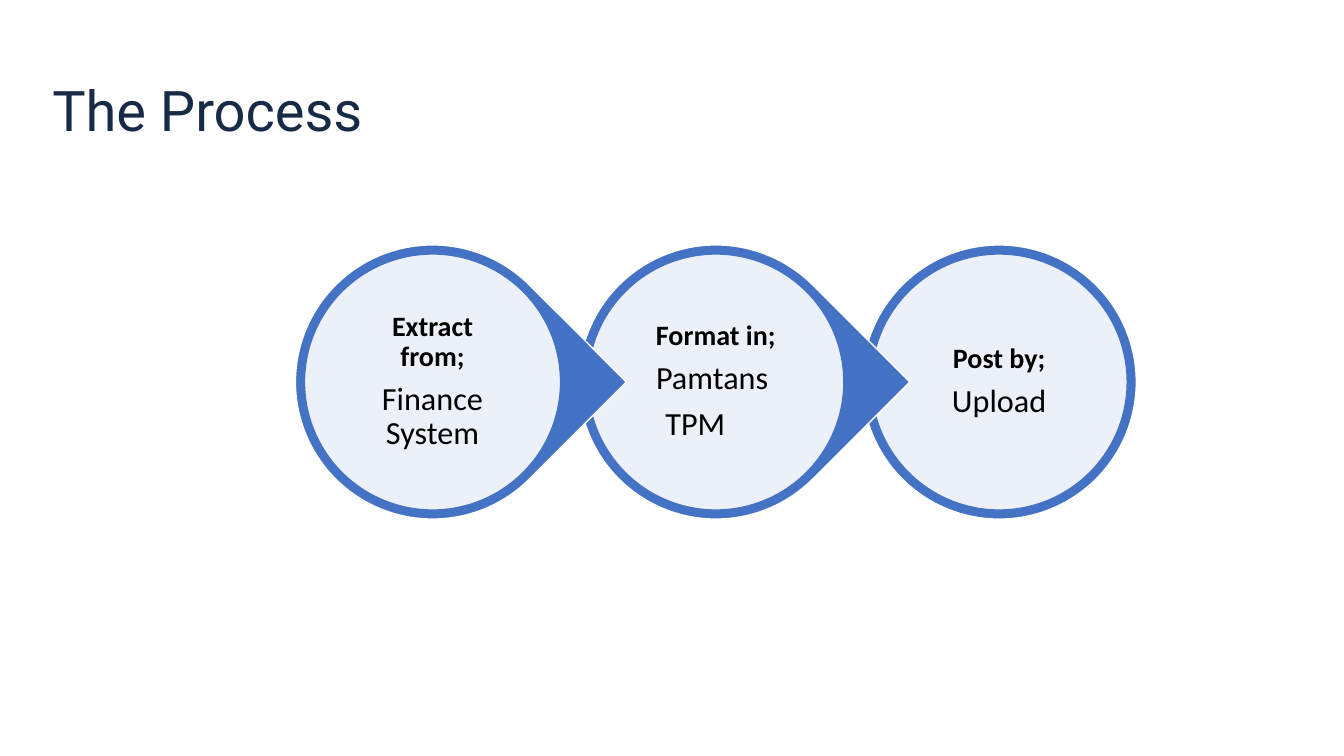
import pptx
import pptx.dml.color
import pptx.enum.shapes
import pptx.enum.text
import pptx.util
from lxml import etree

Inches, Pt = pptx.util.Inches, pptx.util.Pt
SHAPES = pptx.enum.shapes.MSO_SHAPE
ANCHOR = pptx.enum.text.MSO_ANCHOR
ALIGN = pptx.enum.text.PP_ALIGN

COLORS = {"title": "172B46", "ring": "4472C4", "white": "FFFFFF", "text": "000000"}

SLIDE_WIDTH, SLIDE_HEIGHT = 13.33, 7.5
FIRST_CENTER, CENTER_Y = 4.29, 3.79
STEP_PITCH = 2.81
RING_SIZE, DISC_SIZE, LABEL_SIZE = 2.72, 2.54, 1.28

STEPS = [
    ["Extract from;", "Finance System"],
    ["Format in;", "Pamtans ", "TPM\t"],
    ["Post by;", "Upload"],
]


def rgb(name):
    return pptx.dml.color.RGBColor.from_string(COLORS[name])


def centered_square(center_x, size):
    """Return left, top, width and height of a square on the row of steps."""
    return [Inches(v) for v in (center_x - size / 2, CENTER_Y - size / 2, size, size)]


def add_round(slide, preset, center_x, size, fill, line):
    outline = slide.shapes.add_shape(preset, *centered_square(center_x, size))
    outline.shadow.inherit = False
    outline.fill.solid()
    outline.fill.fore_color.rgb = rgb(fill)
    outline.line.color.rgb = rgb(line)
    outline.line.width = Pt(1)
    return outline


def set_opacity(shape, percent):
    color = shape.fill._xPr.find(".//" + pptx.oxml.ns.qn("a:srgbClr"))
    etree.SubElement(color, pptx.oxml.ns.qn("a:alpha"), val=str(percent * 1000))


def style(paragraph, font_name, size, color, bold=False):
    paragraph.line_spacing = 0.9
    font = paragraph.font
    font.name, font.size, font.bold = font_name, Pt(size), bold
    font.color.rgb = rgb(color)


def add_title(slide, wording):
    title = slide.shapes.add_textbox(
        Inches(0.42), Inches(0.78), Inches(12.65), Inches(0.94))
    title.text_frame.word_wrap = True
    title.text_frame.text = wording
    style(title.text_frame.paragraphs[0], "Roboto", 40, "title")


def add_label(slide, center_x, lines):
    """Write a bold heading and the lines below it inside a disc."""
    frame = slide.shapes.add_textbox(*centered_square(center_x, LABEL_SIZE)).text_frame
    frame.word_wrap = True
    frame.vertical_anchor = ANCHOR.MIDDLE
    frame.margin_left = frame.margin_right = Inches(0.03)
    frame.margin_top = frame.margin_bottom = Inches(0.03)
    frame.text = "\n".join(lines)
    for index, paragraph in enumerate(frame.paragraphs):
        heading = index == 0
        size = 20 if heading else 23
        paragraph.alignment = ALIGN.CENTER
        paragraph.space_after = Pt(round(size * 0.35))
        style(paragraph, "Calibri", size, "text", heading)


def add_step(slide, center_x, lines, points_on):
    preset = SHAPES.TEAR if points_on else SHAPES.OVAL
    ring = add_round(slide, preset, center_x, RING_SIZE, "ring", "white")
    ring.rotation = 45 if points_on else 0
    disc = add_round(slide, SHAPES.OVAL, center_x, DISC_SIZE, "white", "ring")
    set_opacity(disc, 90)
    add_label(slide, center_x, lines)


def main():
    deck = pptx.Presentation()
    deck.slide_width, deck.slide_height = Inches(SLIDE_WIDTH), Inches(SLIDE_HEIGHT)
    slide = deck.slides.add_slide(deck.slide_layouts[6])
    add_title(slide, "The Process")
    last = len(STEPS) - 1
    # Right to left, so that each pointer overlaps the step after it
    for index in range(last, -1, -1):
        add_step(slide, FIRST_CENTER + index * STEP_PITCH, STEPS[index], index < last)
    deck.save("out.pptx")


if __name__ == "__main__":
    main()
